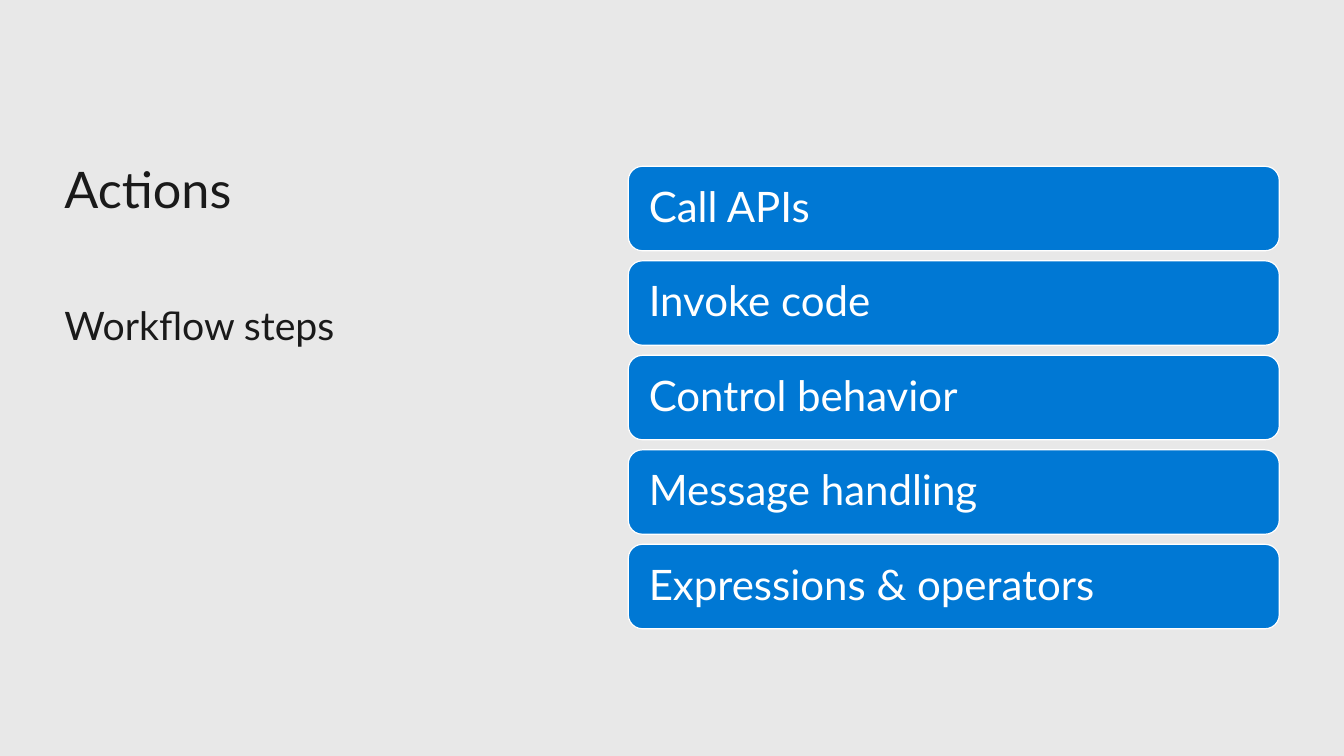
from dataclasses import dataclass

from lxml import etree
from pptx import Presentation
from pptx.dml.color import RGBColor
from pptx.enum.shapes import MSO_SHAPE
from pptx.enum.text import MSO_ANCHOR, MSO_AUTO_SIZE, PP_ALIGN
from pptx.oxml.ns import qn
from pptx.util import Pt

ROUND = MSO_SHAPE.ROUNDED_RECTANGLE
TOP, MIDDLE = MSO_ANCHOR.TOP, MSO_ANCHOR.MIDDLE
FIXED = MSO_AUTO_SIZE.NONE
LEFT = PP_ALIGN.LEFT


@dataclass(frozen=True)
class Theme:
    font: str = "Lato"
    back: RGBColor = RGBColor.from_string("E8E8E8")
    ink: RGBColor = RGBColor.from_string("1A1A1A")
    bar: RGBColor = RGBColor.from_string("0078D4")
    white: RGBColor = RGBColor.from_string("FFFFFF")
    title: int = 36
    body: int = 28
    step: int = 30


THEME = Theme()
STEPS = ["Call APIs", "Invoke code", "Control behavior",
         "Message handling", "Expressions & operators"]


def assign(item, values):
    for name, value in values.items():
        setattr(item, name, value)


def write(shape, text, size, color, anchor, inset=0, spacing=1.0):
    frame = shape.text_frame
    assign(frame, {
        "text": text, "word_wrap": True, "auto_size": FIXED,
        "vertical_anchor": anchor,
        "margin_left": Pt(inset), "margin_right": Pt(inset),
        "margin_top": 0, "margin_bottom": 0,
    })
    para = frame.paragraphs[0]
    assign(para, {"alignment": LEFT, "line_spacing": spacing,
                  "space_before": Pt(0)})
    props = para._p.get_or_add_pPr()
    assign_indent = {"marL": "0", "indent": "0"}
    for name, value in assign_indent.items():
        props.set(name, value)
    etree.SubElement(props, qn("a:buNone"))
    assign(para.font, {"name": THEME.font, "size": Pt(size)})
    para.font.color.rgb = color


def place(holder, text, top, height, size):
    assign(holder, {"left": Pt(46), "top": Pt(top),
                    "width": Pt(390), "height": Pt(height)})
    write(holder, text, size, THEME.ink, TOP)


def add_bar(slide, text, top):
    bar = slide.shapes.add_shape(ROUND, Pt(448.8), Pt(top), Pt(465), Pt(60.3))
    bar.shadow.inherit = False
    bar.fill.solid()
    bar.fill.fore_color.rgb = THEME.bar
    bar.line.color.rgb = THEME.white
    bar.line.width = Pt(0.85)
    write(bar, text, THEME.step, THEME.white, MIDDLE, 11.7, 0.9)


def main():
    deck = Presentation()
    deck.slide_width, deck.slide_height = Pt(960), Pt(540)
    slide = deck.slides.add_slide(deck.slide_layouts[1])
    slide.background.fill.solid()
    slide.background.fill.fore_color.rgb = THEME.back
    place(slide.shapes.title, "Actions", 113, 44, THEME.title)
    place(slide.placeholders[1], "Workflow steps", 215, 34, THEME.body)
    for row, text in enumerate(STEPS):
        add_bar(slide, text, 118.8 + row * 67.5)
    deck.save("out.pptx")


if __name__ == "__main__":
    main()
